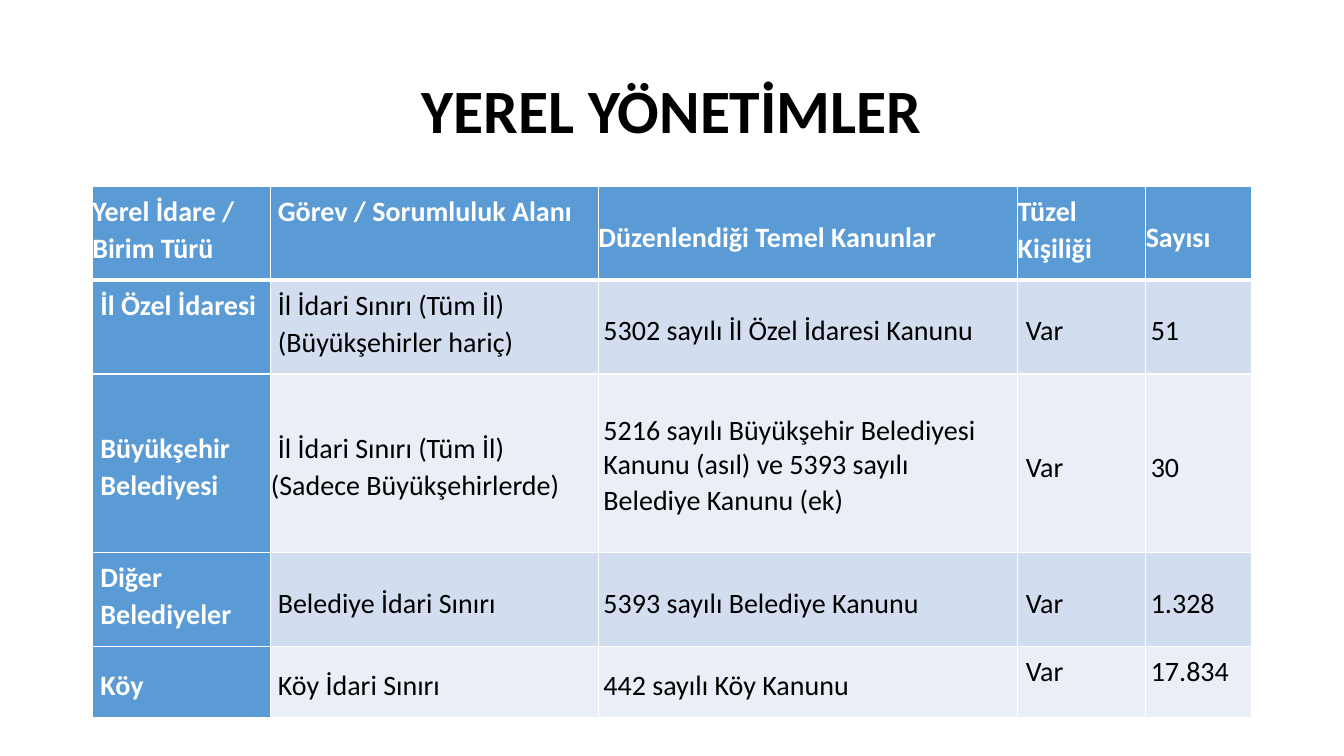
from dataclasses import dataclass

from lxml.etree import SubElement
from pptx import Presentation
from pptx.dml.color import RGBColor
from pptx.enum.text import MSO_ANCHOR as Anchor, MSO_AUTO_SIZE as AutoSize, PP_ALIGN as Align
from pptx.oxml.ns import qn
from pptx.table import Table, _Cell as Cell
from pptx.text.text import Font
from pptx.util import Pt

FONT = "Calibri"
WHITE, BLACK, BLUE = "FFFFFF", "000000", "5B9BD5"
BANDS = ["EAEFF7", "D2DEEF"]
COLUMN_WIDTHS = [127.5, 234, 299.5, 91.5, 75.5]
BODY_INDENTS = [5.75, 5, 3.6, 5.75, 3.6]
HEADER_INDENTS = [0, 5, 0, 0, 0]


@dataclass
class Entry:
    text: str
    anchor: Anchor = Anchor.MIDDLE
    hanging_start: bool = False
    first_spacing: float = 1.07


@dataclass
class Row:
    height: float
    entries: list[Entry]


TOP = Anchor.TOP
ROWS = [
    Row(67, [
        Entry("Yerel İdare / Birim Türü", TOP),
        Entry("Görev / Sorumluluk Alanı", TOP),
        Entry("Düzenlendiği Temel Kanunlar"),
        Entry("Tüzel Kişiliği", TOP),
        Entry("Sayısı"),
    ]),
    Row(67, [
        Entry("İl Özel İdaresi", TOP),
        Entry("İl İdari Sınırı (Tüm İl) (Büyükşehirler hariç)", TOP),
        Entry("5302 sayılı İl Özel İdaresi Kanunu"),
        Entry("Var"),
        Entry("51"),
    ]),
    Row(127.5, [
        Entry("Büyükşehir Belediyesi"),
        Entry("İl İdari Sınırı (Tüm İl) (Sadece Büyükşehirlerde)", hanging_start=True),
        Entry("5216 sayılı Büyükşehir Belediyesi Kanunu (asıl) ve 5393 sayılı\n"
              "Belediye Kanunu (ek)", first_spacing=0.99),
        Entry("Var"),
        Entry("30"),
    ]),
    Row(67, [
        Entry("Diğer\nBelediyeler", TOP),
        Entry("Belediye İdari Sınırı"),
        Entry("5393 sayılı Belediye Kanunu"),
        Entry("Var"),
        Entry("1.328"),
    ]),
    Row(51, [
        Entry("Köy"),
        Entry("Köy İdari Sınırı"),
        Entry("442 sayılı Köy Kanunu"),
        Entry("Var", TOP),
        Entry("17.834", TOP),
    ]),
]


def color(value: str) -> RGBColor:
    return RGBColor.from_string(value)


def format_font(font: Font, size: float, ink: str, bold: bool) -> None:
    font.name, font.size, font.bold = FONT, Pt(size), bold
    font.color.rgb = color(ink)


def add_borders(cell: Cell, top: float, bottom: float) -> None:
    properties = cell._tc.get_or_add_tcPr()
    for side, width in {"L": 1, "R": 1, "T": top, "B": bottom}.items():
        line = SubElement(properties, qn(f"a:ln{side}"), w=str(Pt(width)))
        fill = SubElement(line, qn("a:solidFill"))
        SubElement(fill, qn("a:srgbClr"), val=WHITE)


def fill_cell(cell: Cell, entry: Entry, row: int, column: int) -> None:
    accent = row == 0 or column == 0
    add_borders(cell, 3 if row == 1 else 1, 3 if row == 0 else 1)
    cell.fill.solid()
    cell.fill.fore_color.rgb = color(BLUE if accent else BANDS[row % 2])
    cell.margin_left, cell.margin_top = Pt(0), Pt(4.3)
    cell.margin_right, cell.margin_bottom = Pt(3.6), Pt(0)
    cell.vertical_anchor = entry.anchor
    cell.text_frame.text = entry.text
    indent = (HEADER_INDENTS if row == 0 else BODY_INDENTS)[column]
    for number, para in enumerate(cell.text_frame.paragraphs):
        para.line_spacing = entry.first_spacing if number == 0 else 1.07
        para_properties = para._p.get_or_add_pPr()
        para_properties.set("marL", str(Pt(0 if entry.hanging_start else indent)))
        para_properties.set("indent", str(Pt(indent if entry.hanging_start else 0)))
        for span in para.runs:
            format_font(span.font, 20, WHITE if accent else BLACK, accent)


def fill_table(table: Table) -> None:
    for column, width in enumerate(COLUMN_WIDTHS):
        table.columns[column].width = Pt(width)
    for number, row in enumerate(ROWS):
        table.rows[number].height = Pt(row.height)
        for column, entry in enumerate(row.entries):
            fill_cell(table.cell(number, column), entry, number, column)


def main() -> None:
    deck = Presentation()
    deck.slide_width, deck.slide_height = Pt(960), Pt(540)
    page = deck.slides.add_slide(deck.slide_layouts[5])

    title = page.shapes.title
    title.left, title.top, title.width, title.height = Pt(66), Pt(29), Pt(828), Pt(104.4)
    frame = title.text_frame
    frame.text = "YEREL YÖNETİMLER"
    frame.auto_size = AutoSize.NONE
    frame.vertical_anchor = Anchor.MIDDLE
    para = frame.paragraphs[0]
    para.alignment, para.line_spacing = Align.CENTER, 0.9
    format_font(para.runs[0].font, 44, BLACK, True)

    height = sum(row.height for row in ROWS)
    grid = page.shapes.add_table(len(ROWS), len(COLUMN_WIDTHS), Pt(66), Pt(133.2),
                                 Pt(sum(COLUMN_WIDTHS)), Pt(height))
    fill_table(grid.table)
    deck.save("out.pptx")


if __name__ == "__main__":
    main()
